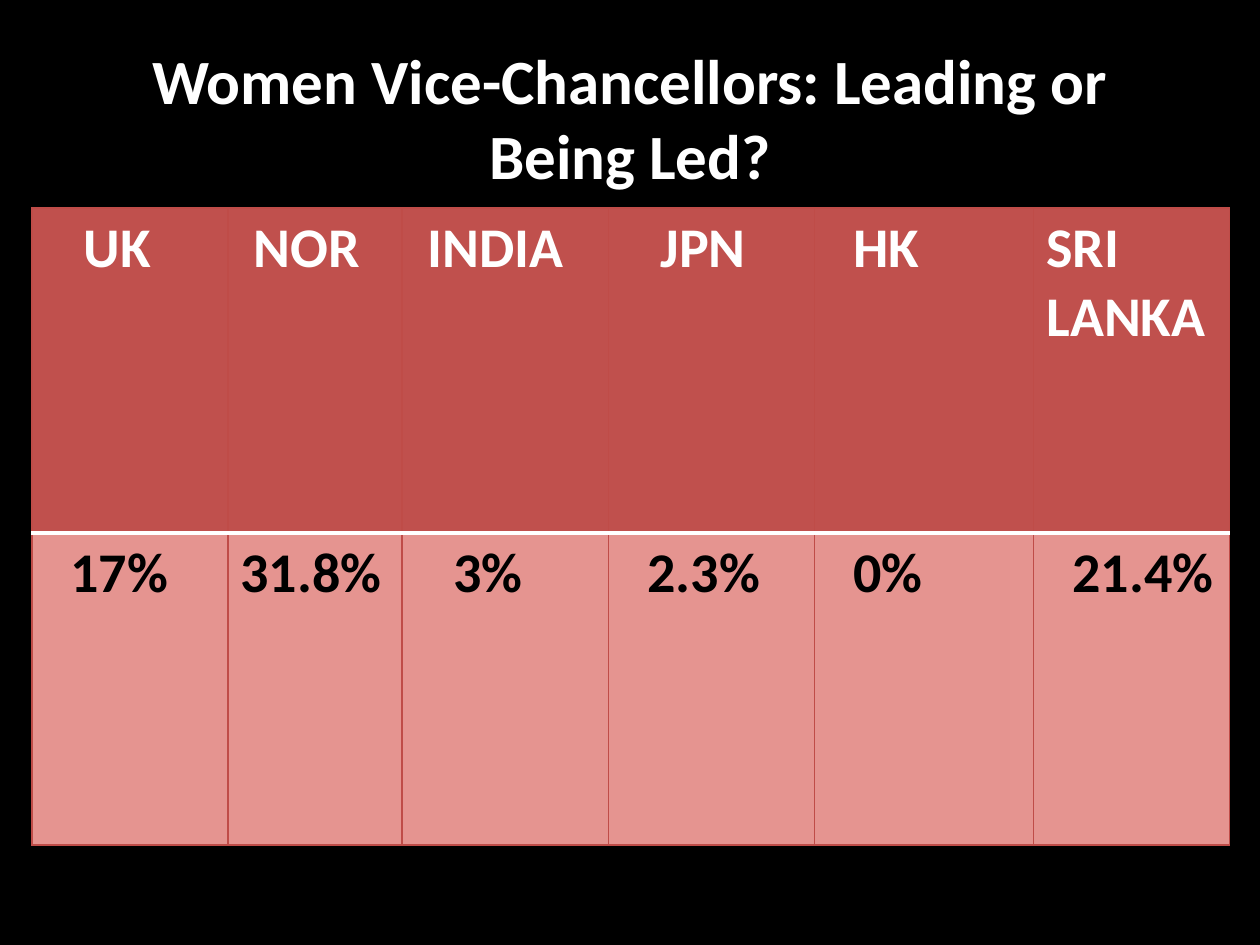
from lxml.etree import SubElement
from pptx import Presentation
from pptx.dml.color import RGBColor
from pptx.enum.text import MSO_ANCHOR as Anchor, PP_ALIGN as Align
from pptx.oxml.ns import qn
from pptx.util import Emu, Pt

EMU_PER_PX = 914400 / 126
FONT = "Calibri"
COLORS = {
    "background": "000000",
    "light_text": "FFFFFF",
    "dark_text": "000000",
    "header": "C0504D",
    "body": "E59490",
    "grid": "BF4C48",
    "divider": "FFFFFF",
}
INDENT_STEP = 13
COLUMN_WIDTHS = [196, 174, 207, 206, 219, 196]
ROW_HEIGHTS = [325, 312]
# Each entry: cell text (one paragraph per line), indent steps
COUNTRIES = [("UK", 3), ("NOR", 1), ("INDIA", 1), ("JPN", 3), ("HK", 2), ("SRI\nLANKA", 0)]
SHARES = [("17%", 2), ("31.8%", 0), ("3%", 3), ("2.3%", 2), ("0%", 2), ("21.4%", 2)]


def px(length):
    return Emu(round(length * EMU_PER_PX))


def rgb(name):
    return RGBColor.from_string(COLORS[name])


def add_run(paragraph, text, size, color):
    run = paragraph.add_run()
    run.text = text
    run.font.name = FONT
    run.font.size = Pt(size)
    run.font.bold = True
    run.font.color.rgb = rgb(color)


def add_title(slide, text):
    title = slide.shapes.title
    title.left, title.top, title.width, title.height = px(63), px(38), px(1134), px(158)
    frame = title.text_frame
    frame.word_wrap = True
    frame.vertical_anchor = Anchor.MIDDLE
    paragraph = frame.paragraphs[0]
    paragraph.alignment = Align.CENTER
    add_run(paragraph, text, 36, "light_text")


def set_border(cell, side, color, width):
    """Draw one cell edge; side is L, R, T or B, in that order."""
    properties = cell._tc.get_or_add_tcPr()
    line = SubElement(properties, qn(f"a:ln{side}"), w=str(Pt(width)))
    fill = SubElement(line, qn("a:solidFill"))
    SubElement(fill, qn("a:srgbClr"), val=COLORS[color])


def fill_cell(cell, text, indent, text_color, fill_color, divider_side):
    for side in "LRTB":
        if side == divider_side:
            set_border(cell, side, "divider", 2)
        else:
            set_border(cell, side, "grid", 0.75)
    cell.fill.solid()
    cell.fill.fore_color.rgb = rgb(fill_color)
    frame = cell.text_frame
    for index, line in enumerate(text.split("\n")):
        paragraph = frame.add_paragraph() if index else frame.paragraphs[0]
        paragraph._p.get_or_add_pPr().set("marL", str(px(indent * INDENT_STEP)))
        add_run(paragraph, line, 32, text_color)


def add_share_table(slide):
    table = slide.shapes.add_table(
        len(ROW_HEIGHTS), len(COLUMN_WIDTHS), px(32), px(208),
        px(sum(COLUMN_WIDTHS)), px(sum(ROW_HEIGHTS)),
    ).table
    for column, width in zip(table.columns, COLUMN_WIDTHS):
        column.width = px(width)
    for row, height in zip(table.rows, ROW_HEIGHTS):
        row.height = px(height)
    row_styles = [
        (COUNTRIES, "light_text", "header", "B"),
        (SHARES, "dark_text", "body", "T"),
    ]
    for row, (entries, *style) in zip(table.rows, row_styles):
        for cell, (text, indent) in zip(row.cells, entries):
            fill_cell(cell, text, indent, *style)


def main():
    presentation = Presentation()
    presentation.slide_width, presentation.slide_height = px(1260), px(945)
    slide = presentation.slides.add_slide(presentation.slide_layouts[5])
    slide.background.fill.solid()
    slide.background.fill.fore_color.rgb = rgb("background")
    add_title(slide, "Women Vice-Chancellors: Leading or Being Led?")
    add_share_table(slide)
    presentation.save("out.pptx")


if __name__ == "__main__":
    main()
